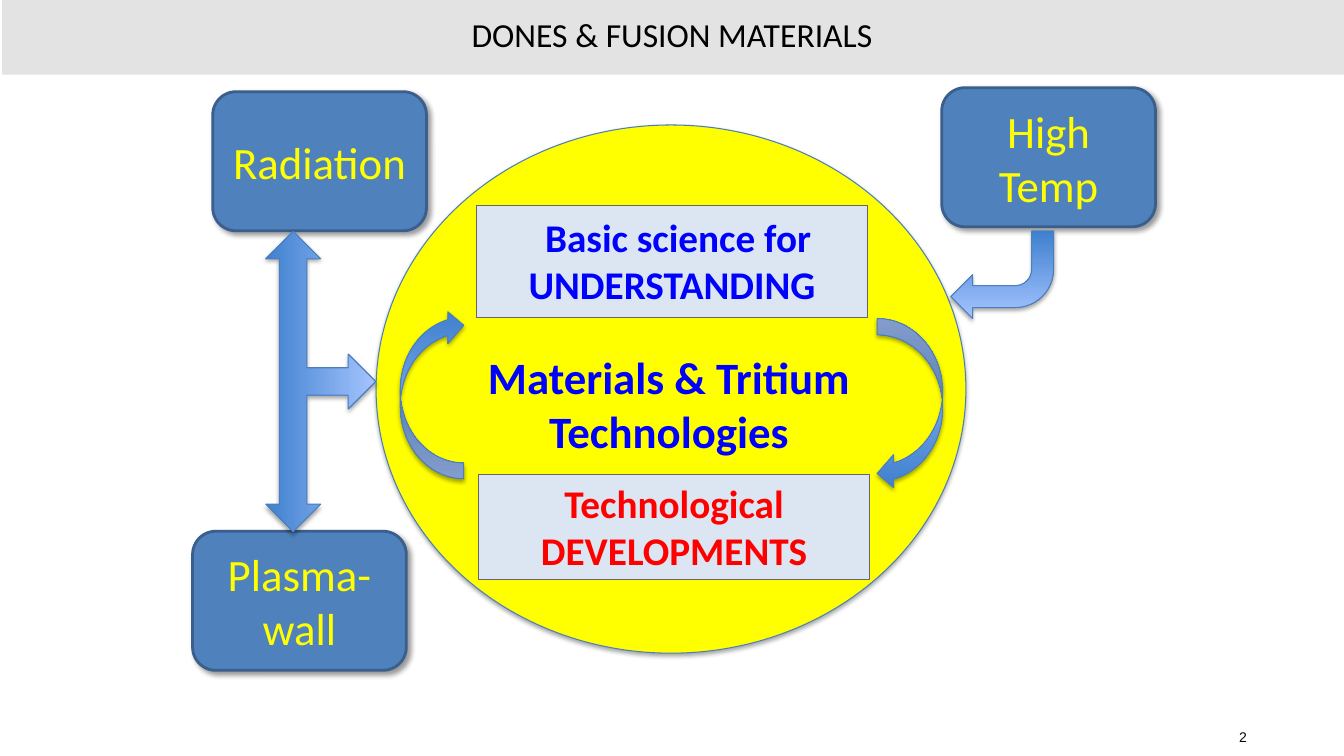
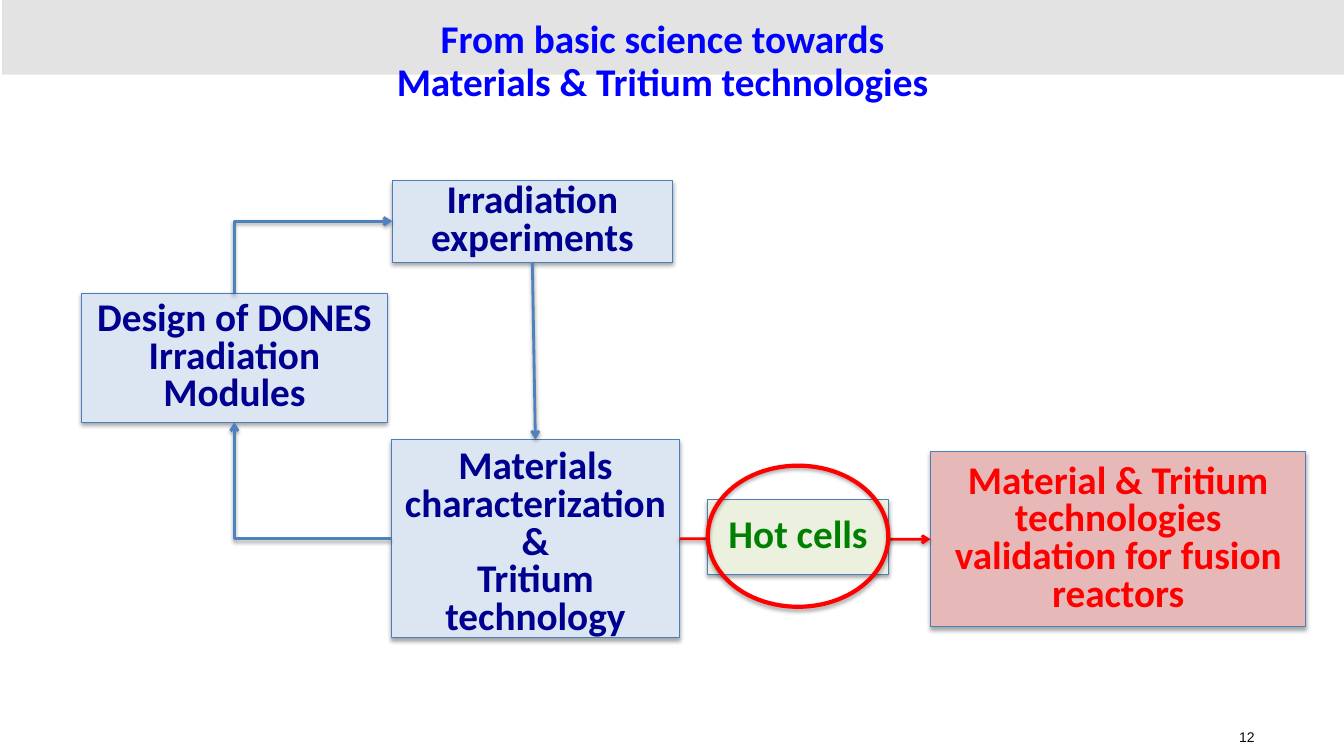
from lxml import etree
from pptx import Presentation
from pptx.dml.color import RGBColor as RGB
from pptx.enum.shapes import MSO_CONNECTOR as LINE, MSO_SHAPE as SHAPE
from pptx.enum.text import MSO_ANCHOR as ANCHOR, PP_ALIGN as ALIGN
from pptx.oxml.ns import qn
from pptx.util import Inches, Pt

# Grid: square cells, 133.3 columns by 75 rows
CELL = Inches(0.1)
COLS, ROWS = 133.3, 75

# Colours
BAND_GREY = RGB(0xE3, 0xE3, 0xE3)
INK = RGB(0x00, 0x0D, 0x08)
BLACK = RGB(0x00, 0x00, 0x00)
YELLOW = RGB(0xFF, 0xFF, 0x00)
BLUE = RGB(0x00, 0x00, 0xFF)
NAVY = RGB(0x00, 0x00, 0x90)
RED = RGB(0xFF, 0x00, 0x00)
GREEN = RGB(0x00, 0x80, 0x00)
PALE_BLUE = RGB(0xDC, 0xE6, 0xF2)
PALE_RED = RGB(0xE6, 0xB9, 0xB8)
PALE_GREEN = RGB(0xEB, 0xF1, 0xDE)
STEEL = RGB(0x4F, 0x81, 0xBD)
STEEL_EDGE = RGB(0x3A, 0x5F, 0x8C)
EDGE = RGB(0x4B, 0x7E, 0xBC)
GREY_EDGE = RGB(0x66, 0x66, 0x66)
GRADIENT = (RGB(0x3F, 0x80, 0xCE), RGB(0xA4, 0xC4, 0xFF))

# Shadows: opacity %, blur pt, distance pt, direction in degrees
SOFT = (35, 3.1, 1.8, 90)
CARD = (40, 4, 3, 45)
WIRE = (38, 3.1, 1.6, 90)


def cast(obj, shadow=None):
    """Give a finished shape or connector its shadow, or none."""
    effects = etree.SubElement(obj._element.spPr, qn("a:effectLst"))
    if shadow:
        alpha, blur, dist, angle = shadow
        outer = etree.SubElement(
            effects, qn("a:outerShdw"), blurRad=str(Pt(blur)), dist=str(Pt(dist)),
            dir=str(angle * 60000), rotWithShape="0")
        black = etree.SubElement(outer, qn("a:srgbClr"), val="000000")
        etree.SubElement(black, qn("a:alpha"), val=str(alpha * 1000))


def add(slide, box, text="", kind=None, fill=None, edge=None, weight=0.75,
        shadow=None, size=28, color=BLUE, bold=True, font="Calibri",
        align=ALIGN.CENTER, anchor=ANCHOR.TOP, spacing=None, wrap=True,
        indent=0, margin=0, insets=(0.5, 0.5)):
    """Add a preset shape, or a text box when no kind is given."""
    place = [round(v * CELL) for v in box]
    if kind is None:
        sp = slide.shapes.add_textbox(*place)
    else:
        sp = slide.shapes.add_shape(kind, *place)
        if fill is None:
            sp.fill.background()
        elif fill is GRADIENT:
            sp.fill.gradient()
            sp.fill.gradient_angle = 90
            for stop, shade in zip(sp.fill.gradient_stops, GRADIENT):
                stop.color.rgb = shade
        else:
            sp.fill.solid()
            sp.fill.fore_color.rgb = fill
        if edge is None:
            sp.line.fill.background()
        else:
            sp.line.color.rgb = edge
            sp.line.width = Pt(weight)
        cast(sp, shadow)
    if text:
        tf = sp.text_frame
        tf.word_wrap = wrap
        tf.vertical_anchor = anchor
        tf.margin_top, tf.margin_bottom = [round(v * CELL) for v in insets]
        for i, line in enumerate(text.split("\n")):
            p = tf.paragraphs[0] if i == 0 else tf.add_paragraph()
            p.alignment = align
            p.line_spacing = spacing
            pPr = p._p.get_or_add_pPr()
            pPr.set("marL", str(round(margin * CELL)))
            pPr.set("indent", str(round(indent * CELL)))
            r = p.add_run()
            r.text = line
            r.font.name, r.font.size, r.font.bold = font, Pt(size), bold
            r.font.color.rgb = color
    return sp


prs = Presentation()
prs.slide_width, prs.slide_height = round(COLS * CELL), ROWS * CELL

# Shared frame: page number and title band
slides = []
for number in ("2", "12"):
    slide = prs.slides.add_slide(prs.slide_layouts[6])
    add(slide, (121.9, 71.8, 4.9, 2.7), number, size=10, color=INK, bold=False,
        font="Arial", align=ALIGN.LEFT, wrap=False)
    add(slide, (0.2, -0.1, COLS - 0.2, 7.5), kind=SHAPE.RECTANGLE, fill=BAND_GREY)
    slides.append(slide)
overview, workflow = slides

# Overview: central ellipse with its two boxes
arrow_style = dict(fill=GRADIENT, edge=EDGE, shadow=SOFT)
add(overview, (37.3, 12.4, 58.5, 52.4), kind=SHAPE.OVAL, fill=YELLOW, edge=EDGE,
    shadow=SOFT)
add(overview, (47.5, 47.1, 38.7, 10.4), "Technological DEVELOPMENTS",
    kind=SHAPE.RECTANGLE, fill=PALE_BLUE, edge=GREY_EDGE, color=RED)
add(overview, (47.3, 20.4, 38.7, 11.1), "Basic science for UNDERSTANDING",
    kind=SHAPE.RECTANGLE, fill=PALE_BLUE, edge=GREY_EDGE, indent=1.2,
    insets=(0.8, 0.5))

# Cycle arrows between the boxes
add(overview, (87, 31.6, 6.5, 17), kind=SHAPE.CURVED_LEFT_ARROW, **arrow_style)
back = add(overview, (39.7, 30.7, 6.3, 16.8), kind=SHAPE.CURVED_LEFT_ARROW,
           **arrow_style)
for flip in ("flipH", "flipV"):
    back._element.spPr.xfrm.set(flip, "1")

add(overview, (46.6, 34.2, 39.5, 11.8), "Materials & Tritium Technologies", size=32)
add(overview, (45.6, 0.9, 42.1, 5), "DONES & FUSION MATERIALS", size=24,
    color=BLACK, bold=False, wrap=False)

# Cards for the operating conditions
for left, top, text in ((21.1, 9.1, "Radiation"), (93.4, 8.7, "High Temp"),
                        (19.1, 52.7, "Plasma-wall")):
    add(overview, (left, top, 21.2, 13.8), text, kind=SHAPE.ROUNDED_RECTANGLE,
        fill=STEEL, edge=STEEL_EDGE, weight=2, shadow=CARD, size=32, color=YELLOW,
        bold=False, anchor=ANCHOR.MIDDLE)

# Arrows from the conditions to the ellipse
for kind, box, turn in (
        (SHAPE.LEFT_RIGHT_UP_ARROW, (16.9, 32.4, 29.8, 10.9), 90),
        (SHAPE.BENT_ARROW, (94.3, 22.9, 10.2, 8.7), 180)):
    add(overview, box, kind=kind, **arrow_style).rotation = turn

# Workflow: title and step boxes
add(workflow, (29.8, 1.5, 70.1, 9.5),
    "From basic science towards\nMaterials & Tritium technologies",
    spacing=0.9, margin=1.7)

step_style = dict(kind=SHAPE.RECTANGLE, edge=EDGE, shadow=SOFT, spacing=0.8,
                  anchor=ANCHOR.MIDDLE)
design = add(workflow, (8.1, 29.1, 30.3, 12.8), "Design of DONES Irradiation Modules",
             fill=PALE_BLUE, color=NAVY, **step_style)
irradiation = add(workflow, (38.9, 17.9, 27.8, 8.1), "Irradiation experiments",
                  fill=PALE_BLUE, color=NAVY, **step_style)
testing = add(workflow, (38.8, 43.6, 28.6, 19.7),
              "Materials characterization\n&\nTritium technology",
              fill=PALE_BLUE, color=NAVY, insets=(1, 0), **step_style)
validation = add(workflow, (92.3, 44.8, 37.2, 17.4),
                 "Material & Tritium technologies validation for fusion reactors",
                 fill=PALE_RED, color=RED, **step_style)

# Connectors: sides are 0 top, 1 left, 2 bottom, 3 right
for start, out, end, into, kind, color in (
        (design, 0, irradiation, 1, LINE.ELBOW, STEEL),
        (irradiation, 2, testing, 0, LINE.STRAIGHT, STEEL),
        (testing, 1, design, 2, LINE.ELBOW, STEEL),
        (testing, 3, validation, 1, LINE.STRAIGHT, RED)):
    wire = workflow.shapes.add_connector(kind, 0, 0, 0, 0)
    wire.begin_connect(start, out)
    wire.end_connect(end, into)
    wire.line.color.rgb = color
    wire.line.width = Pt(2)
    etree.SubElement(wire.line._get_or_add_ln(), qn("a:tailEnd"), type="arrow")
    cast(wire, WIRE)
    if kind == LINE.ELBOW:
        spPr = wire._element.spPr
        spPr.find(qn("a:prstGeom")).set("prst", "bentConnector2")
        if out == 0:
            # Leave upwards first: a quarter turn about the same centre
            w, h = wire.width, wire.height
            wire.left += (w - h) // 2
            wire.top += (h - w) // 2
            wire.width, wire.height = h, w
            for key, value in (("rot", "5400000"), ("flipH", "1"), ("flipV", "1")):
                spPr.find(qn("a:xfrm")).set(key, value)

# Hot cells, ringed, on top of the red arrow
add(workflow, (70.2, 49.6, 17.9, 7.4), "Hot cells", fill=PALE_GREEN, color=GREEN,
    **step_style)
add(workflow, (70.2, 46.2, 17.9, 14), kind=SHAPE.OVAL, edge=RED, weight=3,
    shadow=SOFT)

prs.save("out.pptx")
